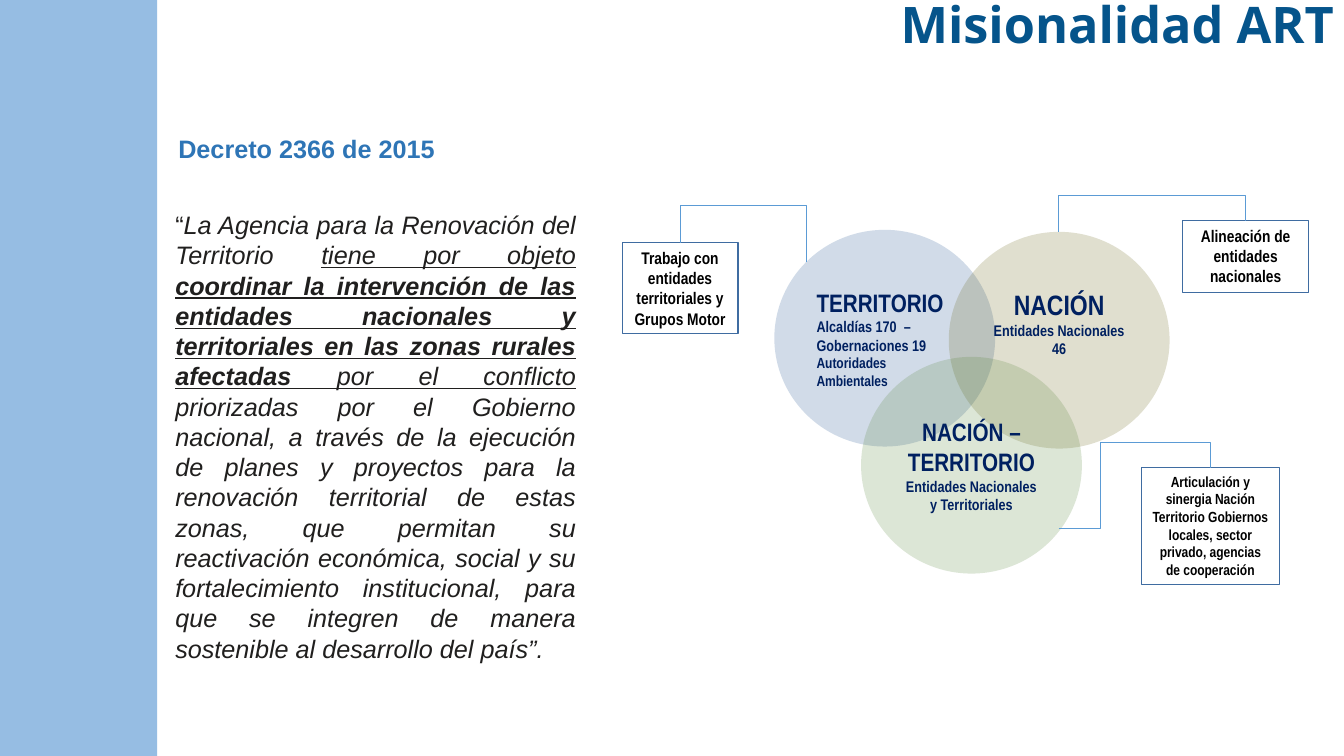
from dataclasses import dataclass
from lxml import etree
from pptx import Presentation
from pptx.dml.color import RGBColor
from pptx.enum.shapes import MSO_CONNECTOR, MSO_SHAPE
from pptx.enum.text import MSO_ANCHOR, MSO_AUTO_SIZE, PP_ALIGN
from pptx.oxml.ns import qn
from pptx.util import Inches, Pt

RECT, OVAL = MSO_SHAPE.RECTANGLE, MSO_SHAPE.OVAL
ELBOW = MSO_CONNECTOR.ELBOW
LEFT, RIGHT = PP_ALIGN.LEFT, PP_ALIGN.RIGHT
MID, FULL = PP_ALIGN.CENTER, PP_ALIGN.JUSTIFY
TOP, CENTER = MSO_ANCHOR.TOP, MSO_ANCHOR.MIDDLE
GROW = MSO_AUTO_SIZE.SHAPE_TO_FIT_TEXT


@dataclass
class Theme:
    bar: str = "96BDE3"
    title: str = "05548B"
    head: str = "2E75B6"
    body: str = "201F1E"
    navy: str = "002060"
    black: str = "000000"
    edge: str = "3F6CA1"
    link: str = "5B9BD5"
    blue: str = "3F6CA1"
    sand: str = "676112"
    green: str = "548235"
    sans: str = "Arial"
    slim: str = "Arial Narrow"
    open: str = "Open Sans"
    huge: float = 36
    large: float = 20
    main: float = 18
    note: float = 12
    small: float = 11
    tiny: float = 10.5


theme = Theme()


def rgb(code):
    return RGBColor.from_string(code)


def write(shape, paras, face, color, align):
    frame = shape.text_frame
    frame.word_wrap = True
    for i, (size, runs) in enumerate(paras):
        para = frame.add_paragraph() if i else frame.paragraphs[0]
        para.alignment = align
        for text, style in runs:
            run = para.add_run()
            run.text = text
            font = run.font
            font.name, font.size = face, Pt(size)
            font.color.rgb = rgb(color)
            font.bold = "b" in style
            font.italic = "i" in style
            font.underline = "u" in style
    return frame


deck = Presentation()
deck.slide_width, deck.slide_height = Inches(13.33), Inches(7.5)
slide = deck.slides.add_slide(deck.slide_layouts[6])
shapes = slide.shapes

bar = shapes.add_shape(RECT, 0, 0, Inches(1.56), Inches(7.5))
bar.shadow.inherit = False
bar.fill.solid()
bar.fill.fore_color.rgb = rgb(theme.bar)
bar.line.fill.background()

quote = [
    ("“", ""),
    ("La Agencia para la Renovación del Territorio ", "i"),
    ("tiene por objeto ", "iu"),
    ("coordinar la intervención de las entidades nacionales y territoriales "
     "en las zonas rurales afectadas ", "biu"),
    ("por el conflicto", "iu"),
    (" priorizadas por el Gobierno nacional, a través de la ejecución de "
     "planes y proyectos para la renovación territorial de estas zonas, que "
     "permitan su reactivación económica, social y su fortalecimiento "
     "institucional, para que se integren de manera sostenible al desarrollo "
     "del país”.", "i"),
]
texts = [
    ((1.67, 1.27, 10.52, 0.4), [("Decreto 2366 de 2015", "b")],
     theme.main, theme.sans, theme.head, FULL),
    ((6.47, -0.12, 6.86, 0.71), [("Misionalidad ART", "b")],
     theme.huge, theme.open, theme.title, RIGHT),
    ((1.64, 2.03, 4.17, 4.64), quote,
     theme.main, theme.sans, theme.body, FULL),
]
for area, runs, size, face, color, align in texts:
    box = shapes.add_textbox(*map(Inches, area))
    write(box, [(size, runs)], face, color, align).auto_size = GROW

links = [
    ((7.28, 1.88, 0.19, 1.25), 270, "h", "bentConnector3", [-1.934]),
    ((11.37, 1.32, 0.11, 1.85), 270, "hv", "bentConnector3", [-2.263]),
    ((10.5, 4.64, 1.5, 0.6), 0, "v", "bentConnector4", [0.273, 1.419]),
]

circles = [
    (7.68, 2.28, theme.blue, 24, LEFT, 0.05, [
        (theme.main, "TERRITORIO"),
        (theme.small, "Alcaldías 170  – Gobernaciones 19"),
        (theme.tiny, "Autoridades Ambientales")]),
    (9.41, 2.3, theme.sand, 20, MID, 0.4, [
        (theme.large, "NACIÓN"),
        (theme.small, "Entidades Nacionales 46")]),
    (8.54, 3.54, theme.green, 20, MID, 0.05, [
        (theme.main, "NACIÓN – TERRITORIO"),
        (theme.small, "Entidades Nacionales y Territoriales")]),
]
for x, y, color, alpha, align, base, lines in circles:
    disc = shapes.add_shape(OVAL, Inches(x), Inches(y), Inches(2.19), Inches(2.15))
    disc.shadow.inherit = False
    disc.fill.solid()
    disc.fill.fore_color.rgb = rgb(color)
    tint = disc.fill._xPr.find(qn("a:solidFill"))[0]
    etree.SubElement(tint, qn("a:alpha"), val=str(alpha * 1000))
    disc.line.fill.background()
    paras = [(size, [(text, "b")]) for size, text in lines]
    frame = write(disc, paras, theme.slim, theme.navy, align)
    frame.vertical_anchor = CENTER
    frame.margin_bottom = Inches(base)

notes = [
    ((6.17, 2.41, 1.15, 0.9), theme.note,
     "Trabajo con entidades territoriales y Grupos Motor"),
    ((11.32, 4.64, 1.37, 1.16), theme.tiny,
     "Articulación y sinergia Nación Territorio Gobiernos locales, "
     "sector privado, agencias de cooperación"),
    ((11.73, 2.19, 1.25, 0.71), theme.note,
     "Alineación de entidades nacionales"),
]
for area, size, text in notes:
    note = shapes.add_shape(RECT, *map(Inches, area))
    note.shadow.inherit = False
    note.fill.background()
    note.line.color.rgb = rgb(theme.edge)
    note.line.width = Pt(0.75)
    frame = write(note, [(size, [(text, "b")])], theme.slim, theme.black, MID)
    frame.vertical_anchor = TOP
    frame.auto_size = GROW

for (x, y, w, h), turn, flips, kind, bends in links:
    link = shapes.add_connector(ELBOW, *map(Inches, (x, y, x + w, y + h)))
    link.line.color.rgb = rgb(theme.link)
    link.line.width = Pt(0.5)
    props = link._element.spPr
    frame = props.find(qn("a:xfrm"))
    frame.set("rot", str(turn * 60000))
    for flip in flips:
        frame.set("flip" + flip.upper(), "1")
    geom = props.find(qn("a:prstGeom"))
    geom.set("prst", kind)
    guides = geom.find(qn("a:avLst"))
    for i, bend in enumerate(bends, 1):
        etree.SubElement(guides, qn("a:gd"), name=f"adj{i}",
                         fmla=f"val {round(bend * 100000)}")
    etree.SubElement(props, qn("a:effectLst"))

deck.save("out.pptx")
